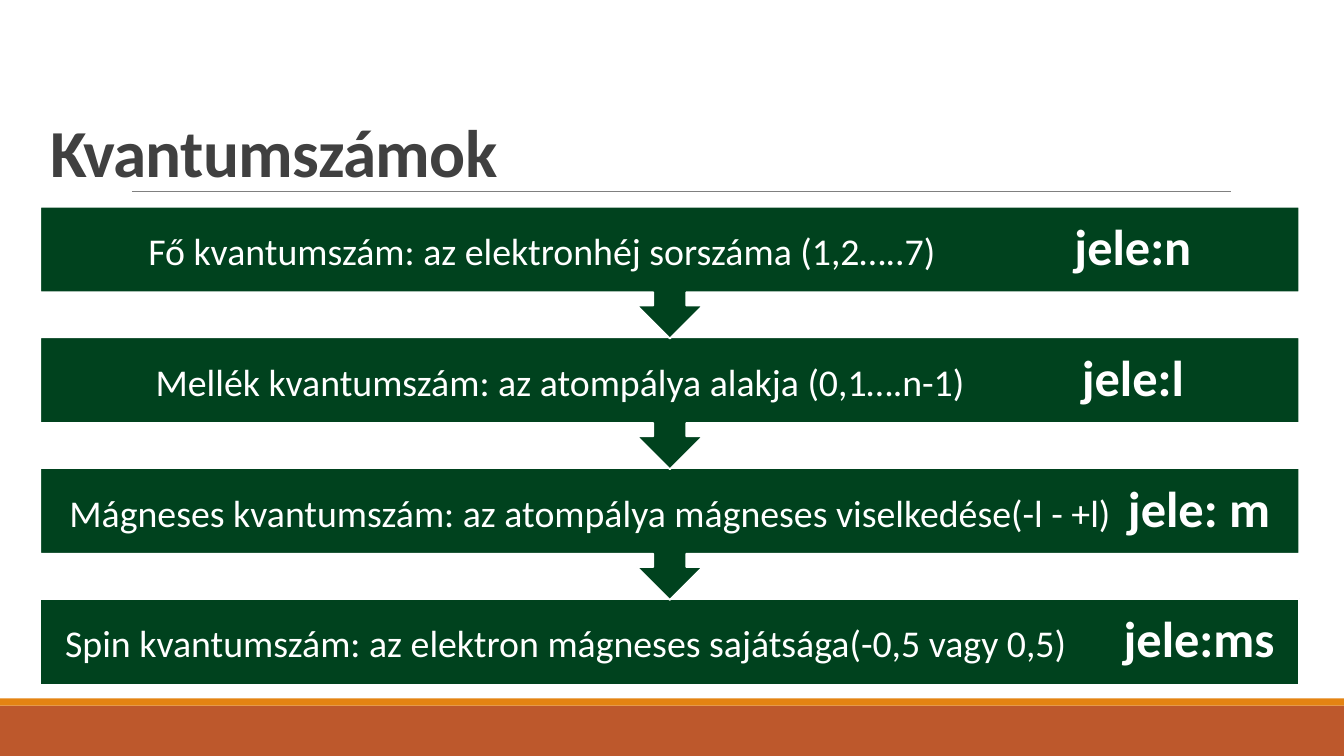
import pptx
import pptx.util
import pptx.dml.color
import pptx.enum.shapes
import pptx.enum.text
import pptx.oxml.ns
import lxml.etree

Pt = pptx.util.Pt
Shape = pptx.enum.shapes.MSO_SHAPE
Anchor = pptx.enum.text.MSO_ANCHOR
Align = pptx.enum.text.PP_ALIGN

COLOURS = {
    "footer": "BD582C",
    "stripe": "E48312",
    "rule": "808080",
    "title": "404040",
    "step": "00421E",
    "white": "FFFFFF",
}
STEPS = [
    ("Fő kvantumszám: az elektronhéj sorszáma (1,2…..7) \t", "jele:n"),
    ("Mellék kvantumszám: az atompálya alakja (0,1….n-1)\t", "jele:l"),
    ("Mágneses kvantumszám: az atompálya mágneses viselkedése(-l - +l)\t", "jele: m"),
    ("Spin kvantumszám: az elektron mágneses sajátsága(-0,5 vagy 0,5)\t", "jele:ms"),
]
PAGE_WIDTH, PAGE_HEIGHT = 960, 540
BAR_HEIGHT = 61.2
CALLOUT_HEIGHT = 94.2
TAB_WIDTH = 94.5


def colour(name):
    return pptx.dml.color.RGBColor.from_string(COLOURS[name])


def apply_format(target, values):
    for name, value in values.items():
        setattr(target, name, value)


def add_span(para, text, size, fill, bold=False):
    span = para.add_run()
    span.text = text
    apply_format(span.font, {"name": "Calibri", "size": Pt(size), "bold": bold})
    span.font.color.rgb = colour(fill)
    return span


def add_block(page, kind, box, fill, outline=None):
    block = page.shapes.add_shape(kind, *map(Pt, box))
    block.shadow.inherit = False
    block.fill.solid()
    block.fill.fore_color.rgb = colour(fill)
    if outline:
        block.line.color.rgb = colour(outline)
        block.line.width = Pt(1.25)
    else:
        block.line.fill.background()
    return block


def add_footer(page, box):
    left, top, width, height = box
    stripe = 5.04
    add_block(page, Shape.RECTANGLE, (left, top + stripe, width, height - stripe), "footer")
    add_block(page, Shape.RECTANGLE, (left, top, width, stripe), "stripe")


def add_title(page, box, text):
    left, top, width, height = box
    rule_y = top + height - 3.6
    rule = page.shapes.add_connector(
        pptx.enum.shapes.MSO_CONNECTOR.STRAIGHT,
        Pt(left + 65.5), Pt(rule_y), Pt(left + 850.3), Pt(rule_y))
    rule.line.color.rgb = colour("rule")
    rule.line.width = Pt(0.5)
    lxml.etree.SubElement(rule._element.spPr, pptx.oxml.ns.qn("a:effectLst"))

    frame = page.shapes.add_textbox(*map(Pt, box)).text_frame
    apply_format(frame, {"word_wrap": True, "vertical_anchor": Anchor.BOTTOM})
    para = frame.paragraphs[0]
    para.line_spacing = 0.85
    span = add_span(para, text, 48, "title", True)
    span.font._element.set("spc", "-50")


def add_step(page, box, kind, description, symbol):
    block = add_block(page, kind, box, "step", "white")
    frame = block.text_frame
    apply_format(frame, {"word_wrap": True, "vertical_anchor": Anchor.MIDDLE})
    for side in ("left", "top", "right", "bottom"):
        setattr(frame, "margin_" + side, Pt(15.12))
    para = frame.paragraphs[0]
    apply_format(para, {"alignment": Align.CENTER, "line_spacing": 0.9})
    para._p.get_or_add_pPr().set("defTabSz", str(int(Pt(TAB_WIDTH))))
    add_span(para, description, 27, "white")
    add_span(para, symbol, 36, "white", True)


def add_steps(page, box, steps):
    left, top, width, height = box
    last = len(steps) - 1
    pitch = (height - BAR_HEIGHT) / last
    for index, (description, symbol) in reversed(list(enumerate(steps))):
        kind, step_height = Shape.DOWN_ARROW_CALLOUT, CALLOUT_HEIGHT
        if index == last:
            kind, step_height = Shape.RECTANGLE, BAR_HEIGHT
        step_box = (left, top + index * pitch, width, step_height)
        add_step(page, step_box, kind, description, symbol)


def main():
    deck = pptx.Presentation()
    apply_format(deck, {"slide_width": Pt(PAGE_WIDTH), "slide_height": Pt(PAGE_HEIGHT)})
    page = deck.slides.add_slide(deck.slide_layouts[6])
    add_footer(page, (0, 498.96, PAGE_WIDTH, 41.04))
    add_title(page, (28.8, 25.92, 792, 114.48), "Kvantumszámok")
    add_steps(page, (28.8, 147.6, 899.28, 341.28), STEPS)
    deck.save("out.pptx")


if __name__ == "__main__":
    main()
